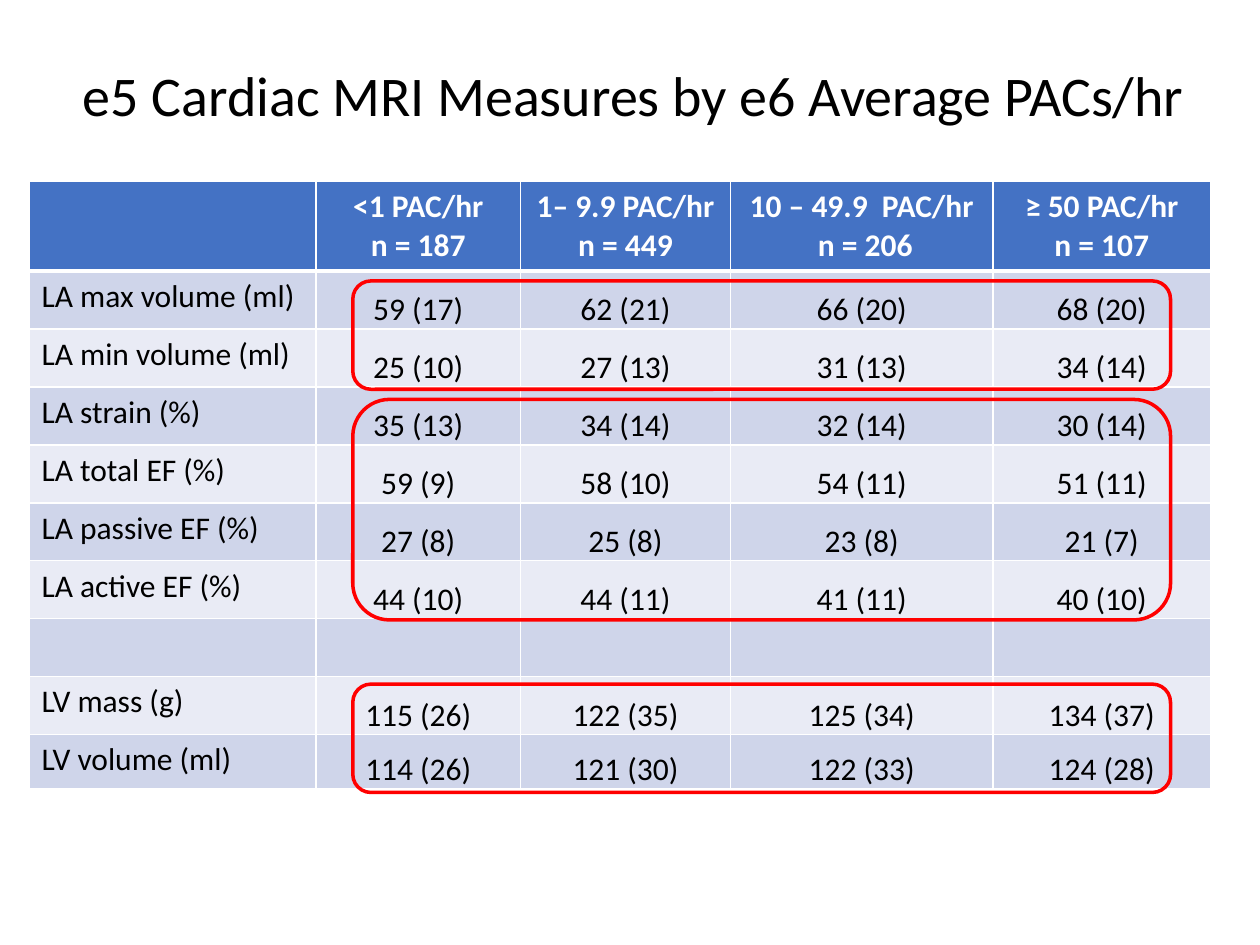
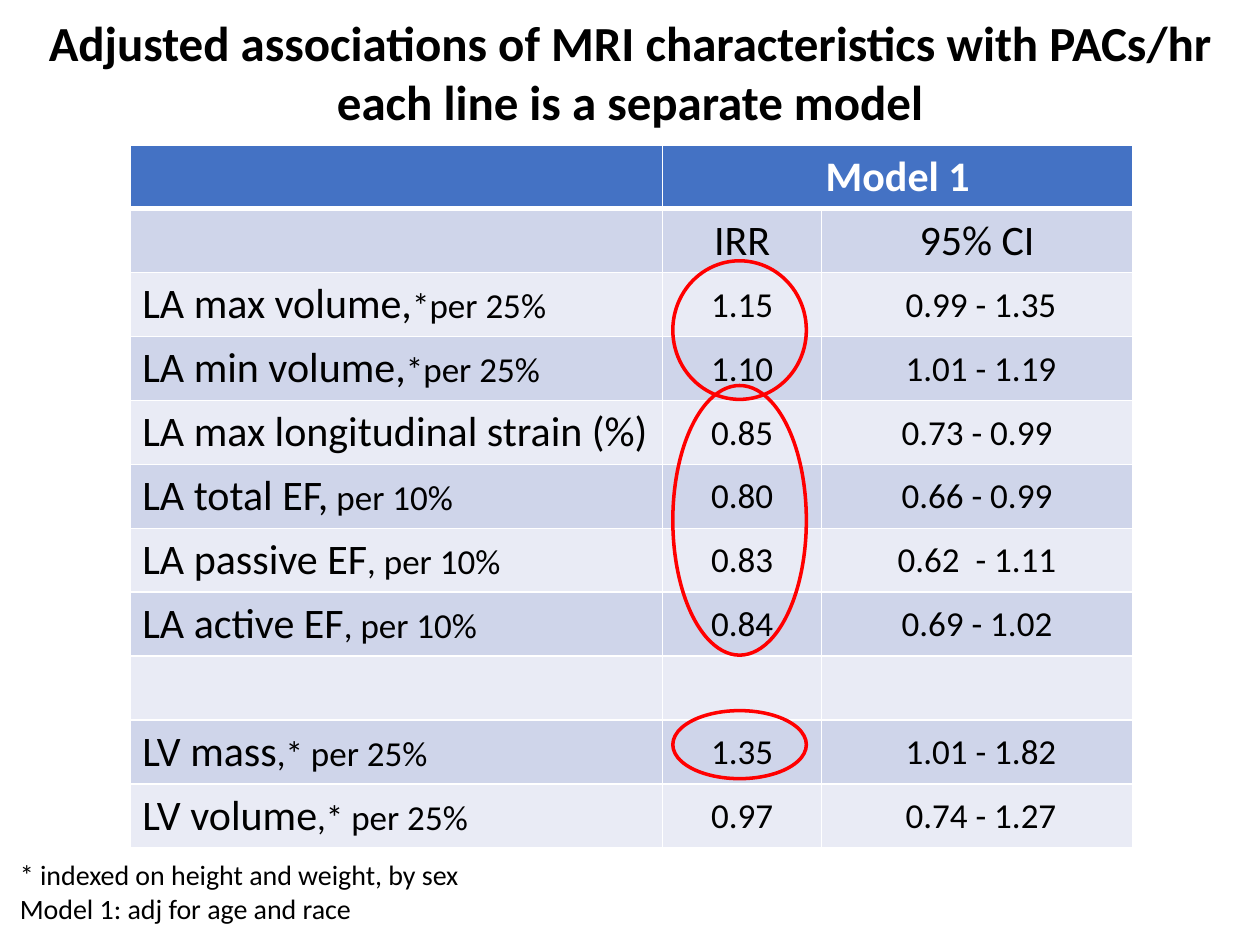
from lxml import etree
from pptx import Presentation
from pptx.dml.color import RGBColor
from pptx.enum.shapes import MSO_SHAPE
from pptx.enum.text import MSO_ANCHOR, MSO_AUTO_SIZE, PP_ALIGN
from pptx.oxml.ns import qn
from pptx.util import Inches, Pt

ROUND, OVAL = MSO_SHAPE.ROUNDED_RECTANGLE, MSO_SHAPE.OVAL
LEFT, MID = PP_ALIGN.LEFT, PP_ALIGN.CENTER
TOP, CENTER, BOTTOM = MSO_ANCHOR.TOP, MSO_ANCHOR.MIDDLE, MSO_ANCHOR.BOTTOM
FONT = "Calibri"
BLACK, WHITE, RED, BLUE = "000000", "FFFFFF", "FF0000", "4472C4"
BANDS = ("E9EBF5", "CFD5EA")
TITLE_ONLY = 5

# Lines of a cell are parted by "\n".
GROUPS = [
    ["", "<1 PAC/hr\nn = 187", "1– 9.9 PAC/hr\nn = 449",
     "10 – 49.9  PAC/hr\n n = 206", "≥ 50 PAC/hr\nn = 107"],
    ["LA max volume (ml)", "59 (17)", "62 (21)", "66 (20)", "68 (20)"],
    ["LA min volume (ml)", "25 (10)", "27 (13)", "31 (13)", "34 (14)"],
    ["LA strain (%)", "35 (13)", "34 (14)", "32 (14)", "30 (14)"],
    ["LA total EF (%)", "59 (9)", "58 (10)", "54 (11)", "51 (11)"],
    ["LA passive EF (%)", "27 (8)", "25 (8)", "23 (8)", "21 (7)"],
    ["LA active EF (%)", "44 (10)", "44 (11)", "41 (11)", "40 (10)"],
    ["", "", "", "", ""],
    ["LV mass (g)", "115 (26)", "122 (35)", "125 (34)", "134 (37)"],
    ["LV volume (ml)", "114 (26)", "121 (30)", "122 (33)", "124 (28)"],
]
# A "|" starts the smaller part of a label.
MODEL = [
    ["", "Model 1", ""],
    ["", "IRR", "95% CI"],
    ["LA max volume,|*per 25%", "1.15", " 0.99 - 1.35"],
    ["LA min volume,|*per 25%", "1.10", " 1.01 - 1.19"],
    ["LA max longitudinal strain (%)", "0.85", "0.73 - 0.99"],
    ["LA total EF,| per 10%", "0.80", "0.66 - 0.99"],
    ["LA passive EF|, per 10%", "0.83", "0.62  - 1.11"],
    ["LA active EF|, per 10%", "0.84", "0.69 - 1.02"],
    ["", "", ""],
    ["LV mass|,* per 25%", "1.35", " 1.01 - 1.82"],
    ["LV volume|,* per 25%", "0.97", " 0.74 - 1.27"],
]


def rgb(code):
    return RGBColor.from_string(code)


def put(frame, text, size=18, small=20, color=BLACK, bold=False, align=LEFT):
    """Write lines of text; the part after "|" takes the small size."""
    for i, line in enumerate(text.split("\n")):
        para = frame.add_paragraph() if i else frame.paragraphs[0]
        para.alignment = align
        para.font.size = Pt(size)
        for part, points in zip(line.split("|"), (size, small)):
            if not part:
                continue
            run = para.add_run()
            run.text = part
            font = run.font
            font.name, font.size, font.bold = FONT, Pt(points), bold
            font.color.rgb = rgb(color)


def place(shape, box):
    shape.left, shape.top, shape.width, shape.height = map(Inches, box)


def head(deck, text, box, **style):
    """Add a title-only slide with its title."""
    slide = deck.slides.add_slide(deck.slide_layouts[TITLE_ONLY])
    place(slide.shapes.title, box)
    frame = slide.shapes.title.text_frame
    frame.auto_size = MSO_AUTO_SIZE.NONE
    frame.vertical_anchor = CENTER
    put(frame, text, align=MID, **style)
    return slide


def edge(cell, row):
    """Draw white cell borders, thick below the header row."""
    props = cell._tc.get_or_add_tcPr()
    thick = {("lnB", 0), ("lnT", 1)}
    for side in ("lnL", "lnR", "lnT", "lnB"):
        width = Pt(3 if (side, row) in thick else 1)
        line = etree.SubElement(props, qn("a:" + side), w=str(width))
        fill = etree.SubElement(line, qn("a:solidFill"))
        etree.SubElement(fill, qn("a:srgbClr"), val=WHITE)


def grid(slide, left, top, widths, heights, data, style):
    """Add a banded table; style(row, col) gives anchor, tightness and text format."""
    table = slide.shapes.add_table(
        len(data), len(widths), Inches(left), Inches(top),
        Inches(sum(widths)), Inches(sum(heights))).table
    for col, width in zip(table.columns, widths):
        col.width = Inches(width)
    for r, (texts, height) in enumerate(zip(data, heights)):
        table.rows[r].height = Inches(height)
        for c, text in enumerate(texts):
            cell = table.cell(r, c)
            edge(cell, r)
            cell.fill.solid()
            cell.fill.fore_color.rgb = rgb(BANDS[r % 2] if r else BLUE)
            anchor, tight, form = style(r, c)
            cell.vertical_anchor = anchor
            if tight:
                cell.margin_left = cell.margin_right = cell.margin_top = Inches(0.01)
                cell.margin_bottom = 0
            put(cell.text_frame, text, bold=r == 0, color=BLACK if r else WHITE,
                align=MID if c or r == 0 else LEFT, **form)
    return table


def group_style(row, col):
    number = row > 0 and col > 0
    return BOTTOM if number else TOP, number, {"size": 18}


def model_style(row, col):
    number = row > 1 and col > 0
    return CENTER, number, {"size": 20 if number else 24}


def ring(slide, kind, *box):
    """Outline a set of values in red."""
    shape = slide.shapes.add_shape(kind, *map(Inches, box))
    shape.shadow.inherit = False
    shape.fill.background()
    shape.line.color.rgb = rgb(RED)
    shape.line.width = Pt(2)


def note(slide, text, *box):
    frame = slide.shapes.add_textbox(*map(Inches, box)).text_frame
    frame.word_wrap = True
    put(frame, text, size=16)


def measures(deck):
    slide = head(deck, "e5 Cardiac MRI Measures by e6 Average PACs/hr",
                 (0.23, 0.45, 9.6, 0.6), size=32)
    grid(slide, 0.23, 1.44, (2.28, 1.62, 1.67, 2.08, 1.73),
         [0.7] + [0.46] * 8 + [0.43], GROUPS, group_style)
    for top, height in ((2.23, 0.86), (3.17, 1.75), (5.43, 0.86)):
        ring(slide, ROUND, 2.8, top, 6.49, height)


def models(deck):
    title = ("Adjusted associations of MRI characteristics with PACs/hr\n"
             "each line is a separate model")
    slide = head(deck, title, (0.16, 0.11, 9.68, 0.91), size=28, bold=True)
    table = grid(slide, 1.03, 1.15, (4.23, 1.26, 2.47),
                 [0.5] * len(MODEL), MODEL, model_style)
    table.cell(0, 1).merge(table.cell(0, 2))
    note(slide, "* indexed on height and weight, by sex\n"
         "Model 1: adj for age and race", 0.06, 6.76, 9.83, 0.64)
    for top, height in ((2.07, 1.1), (3.06, 2.14), (5.64, 0.54)):
        ring(slide, OVAL, 5.34, top, 1.06, height)


def main():
    deck = Presentation()
    deck.slide_width, deck.slide_height = Inches(10), Inches(7.5)
    measures(deck)
    models(deck)
    deck.save("out.pptx")


if __name__ == "__main__":
    main()
